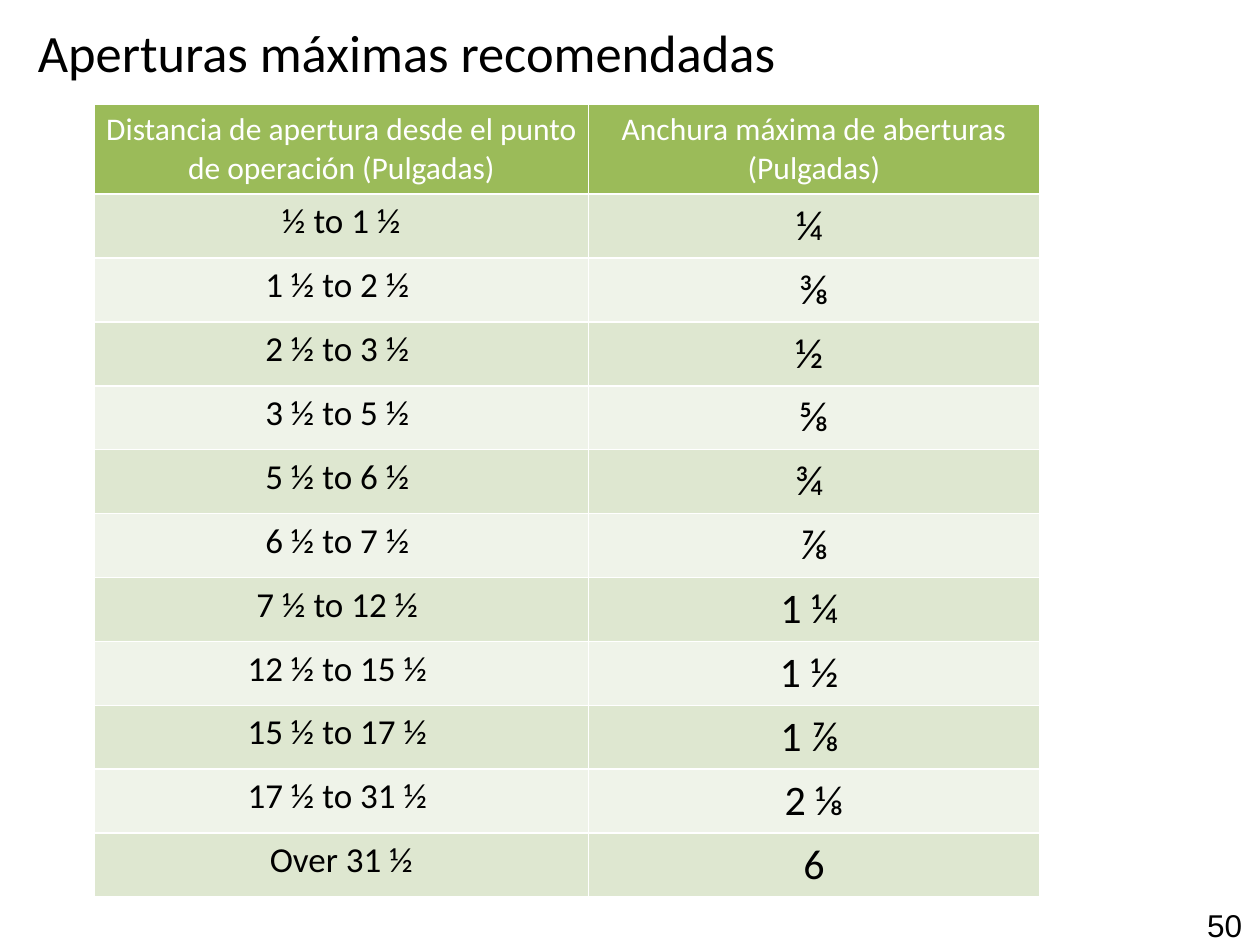
from pptx import Presentation
from pptx.dml.color import RGBColor
from pptx.enum.text import MSO_ANCHOR as Anchor, MSO_AUTO_SIZE as AutoSize, PP_ALIGN as Align
from pptx.util import Inches, Pt

BLACK = RGBColor(0x00, 0x00, 0x00)
WHITE = RGBColor(0xFF, 0xFF, 0xFF)
GREEN = RGBColor(0x9B, 0xBB, 0x59)
BANDS = (RGBColor(0xDE, 0xE7, 0xD0), RGBColor(0xEF, 0xF3, 0xE9))

WIDTH, HEIGHT = Inches(10), Inches(7.5)
TITLE_BOX = (Inches(0.25), Inches(-0.1), Inches(8.23), Inches(1.02))
TABLE_BOX = (Inches(0.75), Inches(0.83), Inches(7.5), Inches(6.2))
NUMBER_BOX = (Inches(9.53), Inches(7.14), Inches(0.39), Inches(0.38))
COLUMN_WIDTHS = (3.92, 3.58)
ROW_HEIGHT = Inches(0.41)
INSET = Inches(0.05)

HEADINGS = (
    "Distancia de apertura desde el punto de operación (Pulgadas)",
    "Anchura máxima de aberturas (Pulgadas)",
)
OPENINGS = (
    ("½ to 1 ½", "¼ "),
    ("1 ½ to 2 ½ ", "⅜"),
    ("2 ½ to 3 ½ ", "½ "),
    ("3 ½ to 5 ½ ", "⅝"),
    ("5 ½ to 6 ½ ", "¾ "),
    ("6 ½ to 7 ½ ", "⅞"),
    ("7 ½ to 12 ½ ", "1 ¼ "),
    ("12 ½ to 15 ½ ", "1 ½ "),
    ("15 ½ to 17 ½ ", "1 ⅞ "),
    ("17 ½ to 31 ½ ", "2 ⅛"),
    ("Over 31 ½", "6"),
)


def set_all(target, values):
    """Set every attribute named in a dict of format values."""
    for name, value in values.items():
        setattr(target, name, value)


def write_text(holder, text, size, color, align=Align.LEFT, font="Calibri"):
    """Write one formatted paragraph and set the insets of its holder."""
    set_all(holder, {f"margin_{side}": INSET for side in ("left", "top", "right", "bottom")})
    frame = getattr(holder, "text_frame", holder)
    para = frame.paragraphs[0]
    para.alignment = align
    span = para.add_run()
    span.text = text
    set_all(span.font, {"name": font, "size": Pt(size), "bold": False})
    span.font.color.rgb = color


def place_title(page, box, text):
    """Move and format the title placeholder."""
    title = page.shapes.title
    set_all(title, dict(zip(("left", "top", "width", "height"), box)))
    set_all(title.text_frame, {
        "vertical_anchor": Anchor.MIDDLE, "word_wrap": True, "auto_size": AutoSize.NONE,
    })
    write_text(title.text_frame, text, 30, BLACK)


def place_table(page, box, headings, rows):
    """Place the banded table of distances and widths."""
    holder = page.shapes.add_table(len(rows) + 1, len(headings), *box)
    table = holder.table
    for column, width in zip(table.columns, COLUMN_WIDTHS):
        column.width = Inches(width)
    for index, texts in enumerate((headings, *rows)):
        table.rows[index].height = ROW_HEIGHT
        fill = BANDS[(index - 1) % 2] if index else GREEN
        sizes = (20, 24) if index else (18, 18)
        for column, (text, size) in enumerate(zip(texts, sizes)):
            cell = table.cell(index, column)
            cell.fill.solid()
            cell.fill.fore_color.rgb = fill
            write_text(cell, text, size, BLACK if index else WHITE, Align.CENTER)
    holder.height = box[3]


def place_number(page, box, text):
    """Place the page number in the lower right corner."""
    frame = page.shapes.add_textbox(*box).text_frame
    set_all(frame, {"word_wrap": False, "auto_size": AutoSize.SHAPE_TO_FIT_TEXT})
    write_text(frame, text, 18, BLACK, font="Arial")


def main():
    """Build the slide and save the deck."""
    deck = Presentation()
    set_all(deck, {"slide_width": WIDTH, "slide_height": HEIGHT})
    page = deck.slides.add_slide(deck.slide_layouts[5])
    place_table(page, TABLE_BOX, HEADINGS, OPENINGS)
    place_title(page, TITLE_BOX, "Aperturas máximas recomendadas")
    place_number(page, NUMBER_BOX, "50")
    deck.save("out.pptx")


if __name__ == "__main__":
    main()
